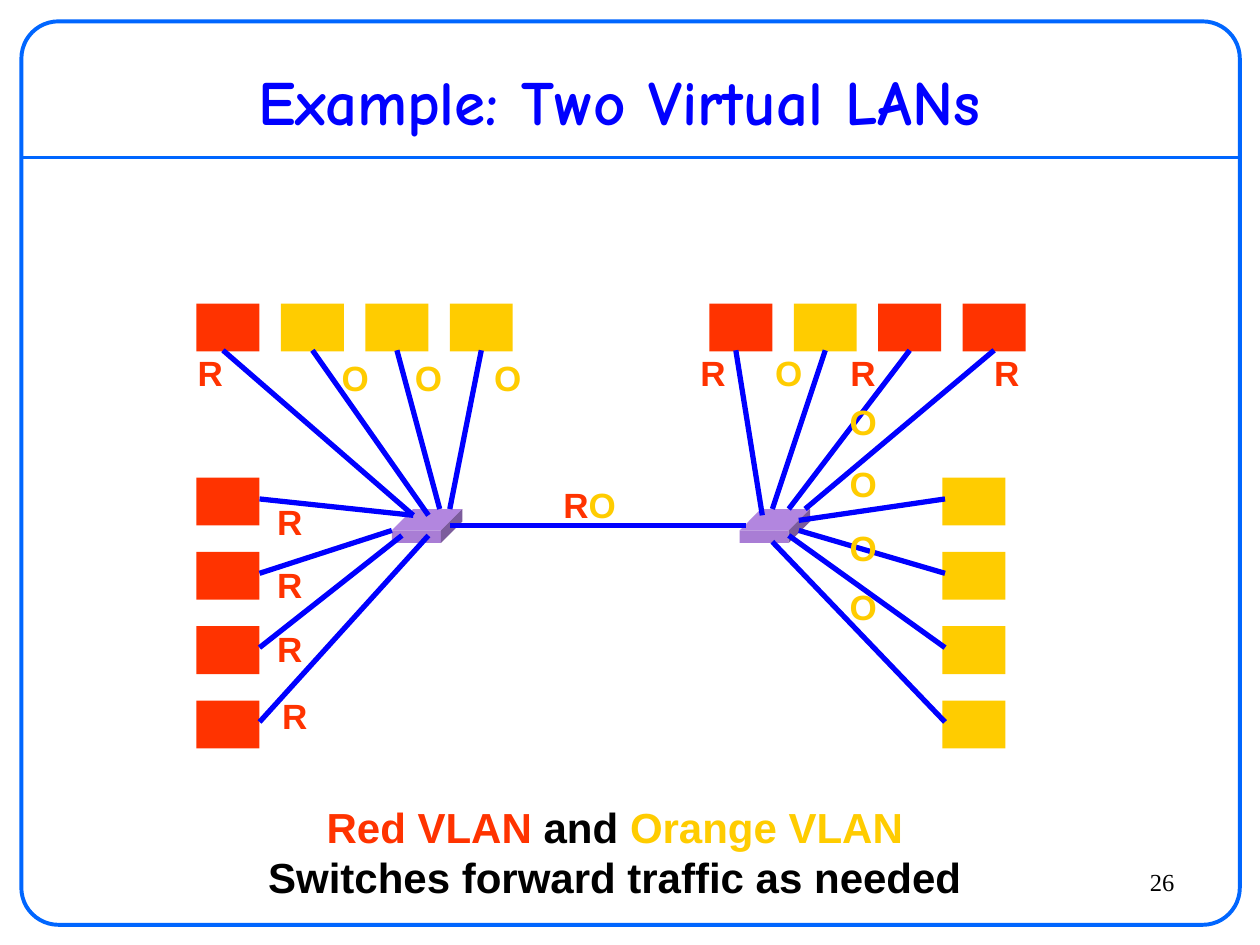
import pptx
import pptx.dml.color
import pptx.enum.shapes
import pptx.enum.text
import pptx.oxml.ns
import pptx.util
from lxml import etree

Inches = pptx.util.Inches
RGBColor = pptx.dml.color.RGBColor
SHAPE = pptx.enum.shapes.MSO_SHAPE
ALIGN = pptx.enum.text.PP_ALIGN
ANCHOR = pptx.enum.text.MSO_ANCHOR

BLUE = RGBColor(0x00, 0x00, 0xFF)
FRAME_BLUE = RGBColor(0x00, 0x66, 0xFF)
RED = RGBColor(0xFF, 0x33, 0x00)
ORANGE = RGBColor(0xFF, 0xCC, 0x00)
BLACK = RGBColor(0x00, 0x00, 0x00)
SWITCH_FRONT = RGBColor(0xA9, 0x7D, 0xD5)
SWITCH_TOP = RGBColor(0xB2, 0x86, 0xDF)
SWITCH_SIDE = RGBColor(0x7C, 0x5C, 0x9C)

VLAN_COLORS = {"R": RED, "O": ORANGE}
LABEL_WIDTHS = {"R": 0.4, "O": 0.42}
HOST_WIDTH, HOST_HEIGHT = 0.5, 0.38
ROW_STEP, COLUMN_STEP = 0.67, 0.59


def write_text(frame, paragraphs, size=20, font="Arial", bold=True,
               align=ALIGN.CENTER, anchor=ANCHOR.TOP, wrap=False):
    frame.word_wrap = wrap
    frame.vertical_anchor = anchor
    for index, runs in enumerate(paragraphs):
        paragraph = frame.add_paragraph() if index else frame.paragraphs[0]
        paragraph.alignment = align
        for words, color in runs:
            run = paragraph.add_run()
            run.text = words
            run.font.size = pptx.util.Pt(size)
            run.font.name = font
            run.font.bold = bold
            run.font.color.rgb = color


def add_text(slide, left, top, width, height, paragraphs, **text_format):
    box = slide.shapes.add_textbox(Inches(left), Inches(top), Inches(width), Inches(height))
    write_text(box.text_frame, paragraphs, **text_format)


def add_line(slide, start, end, color=BLUE, weight=3):
    line = slide.shapes.add_connector(
        pptx.enum.shapes.MSO_CONNECTOR.STRAIGHT,
        *(Inches(value) for value in (*start, *end)))
    line.line.color.rgb = color
    line.line.width = pptx.util.Pt(weight)
    properties = line._element.find(pptx.oxml.ns.qn("p:spPr"))
    etree.SubElement(properties, pptx.oxml.ns.qn("a:effectLst"))


def paint(shape, color):
    shape.shadow.inherit = False
    shape.fill.solid()
    shape.fill.fore_color.rgb = color
    shape.line.fill.background()


def add_block(slide, left, top, width, height, color):
    paint(slide.shapes.add_shape(SHAPE.RECTANGLE, Inches(left), Inches(top),
                                 Inches(width), Inches(height)), color)


def draw_frame(slide, left, top, width, height):
    border = slide.shapes.add_shape(SHAPE.ROUNDED_RECTANGLE, Inches(left), Inches(top),
                                    Inches(width), Inches(height))
    border.adjustments[0] = 0.041
    border.shadow.inherit = False
    border.fill.background()
    border.line.color.rgb = FRAME_BLUE
    border.line.width = pptx.util.Pt(2.25)
    divider = top + 1.08
    add_line(slide, (left, divider), (left + width, divider), FRAME_BLUE, 2.25)


def draw_title(slide, left, top, width, height):
    title = slide.shapes.title
    title.left, title.top = Inches(left), Inches(top)
    title.width, title.height = Inches(width), Inches(height)
    write_text(title.text_frame, [[("Example: Two Virtual LANs", BLUE)]], size=36,
               font="Comic Neue", anchor=ANCHOR.MIDDLE, wrap=True)


def draw_switch(slide, left, top, width, height, depth=0.17):
    right, bottom = left + width, top + height
    add_block(slide, left, top, width, height, SWITCH_FRONT)
    top_face = [(left, top), (left + depth, top - depth),
                (right + depth, top - depth), (right, top)]
    side_face = [(right, top), (right + depth, top - depth),
                 (right + depth, bottom - depth), (right, bottom)]
    for face, color in ((top_face, SWITCH_TOP), (side_face, SWITCH_SIDE)):
        corners = [(Inches(x), Inches(y)) for x, y in face]
        outline = slide.shapes.build_freeform(*corners[0])
        outline.add_line_segments(corners[1:], close=True)
        paint(outline.convert_to_shape(), color)


def draw_host_bank(slide, left, top, step, hosts):
    step_x, step_y = step
    for index, (vlan, *_) in enumerate(hosts):
        add_block(slide, left + index * step_x, top + index * step_y,
                  HOST_WIDTH, HOST_HEIGHT, VLAN_COLORS[vlan])
    for index, (_, port, end, _) in enumerate(hosts):
        start = (left + index * step_x + port[0], top + index * step_y + port[1])
        add_line(slide, start, (left + end[0], top + end[1]))
    for vlan, _, _, label in hosts:
        add_text(slide, left + label[0], top + label[1], LABEL_WIDTHS[vlan], 0.43,
                 [[(vlan, VLAN_COLORS[vlan])]])


def draw_trunk(slide, left, top, width):
    add_line(slide, (left, top), (left + width, top))
    add_text(slide, left + 0.8, top - 0.38, 0.62, 0.43, [[("R", RED), ("O", ORANGE)]])


def draw_caption(slide, left, top, width, height):
    add_text(slide, left, top, width, height, [
        [("Red VLAN", RED), (" and ", BLACK), ("Orange VLAN", ORANGE)],
        [("Switches forward traffic as needed", BLACK)],
    ], size=24)


def draw_page_number(slide, left, top, width, height):
    add_text(slide, left, top, width, height, [[("26", BLACK)]], size=14,
             font="Times New Roman", bold=False, align=ALIGN.RIGHT, wrap=True)


def main():
    deck = pptx.Presentation()
    deck.slide_width, deck.slide_height = Inches(10), Inches(7.5)
    slide = deck.slides.add_slide(deck.slide_layouts[5])

    draw_frame(slide, 0.17, 0.17, 9.67, 7.17)
    draw_page_number(slide, 8.42, 6.83, 1, 0.42)
    draw_title(slide, 0.33, 0.42, 9.17, 0.75)
    for switch_left in (3.11, 5.87):
        draw_switch(slide, switch_left, 4.21, 0.39, 0.1)

    first_port, bottom_port = (0.21, 0.37), (0.25, 0.37)
    right_port, left_port = (0.5, 0.17), (0.02, 0.17)
    row, column = (ROW_STEP, 0), (0, COLUMN_STEP)
    draw_host_bank(slide, 1.56, 3.79, column, [
        ("R", right_port, (1.72, 0.3), (0.54, 0.13)),
        ("R", right_port, (1.55, 0.42), (0.54, 0.63)),
        ("R", right_port, (1.63, 0.46), (0.54, 1.14)),
        ("R", right_port, (1.84, 0.46), (0.58, 1.67)),
    ])
    draw_host_bank(slide, 1.56, 2.41, row, [
        ("R", first_port, (1.72, 1.68), (-0.09, 0.33)),
        ("O", bottom_port, (1.84, 1.68), (1.05, 0.37)),
        ("O", bottom_port, (1.93, 1.63), (1.63, 0.37)),
        ("O", bottom_port, (2.01, 1.63), (2.26, 0.37)),
    ])
    draw_host_bank(slide, 5.63, 2.41, row, [
        ("R", first_port, (0.42, 1.68), (-0.17, 0.33)),
        ("O", bottom_port, (0.5, 1.63), (0.42, 0.33)),
        ("R", bottom_port, (0.63, 1.63), (1.02, 0.33)),
        ("R", bottom_port, (0.76, 1.63), (2.16, 0.33)),
    ])
    draw_host_bank(slide, 7.48, 3.79, column, [
        ("O", left_port, (-1.14, 0.34), (-0.84, -0.66)),
        ("O", left_port, (-1.14, 0.42), (-0.84, -0.17)),
        ("O", left_port, (-1.22, 0.46), (-0.84, 0.34)),
        ("O", left_port, (-1.35, 0.51), (-0.84, 0.81)),
    ])
    draw_trunk(slide, 3.57, 4.17, 2.35)
    draw_caption(slide, 2.03, 6.31, 5.7, 0.9)
    deck.save("out.pptx")


if __name__ == "__main__":
    main()
